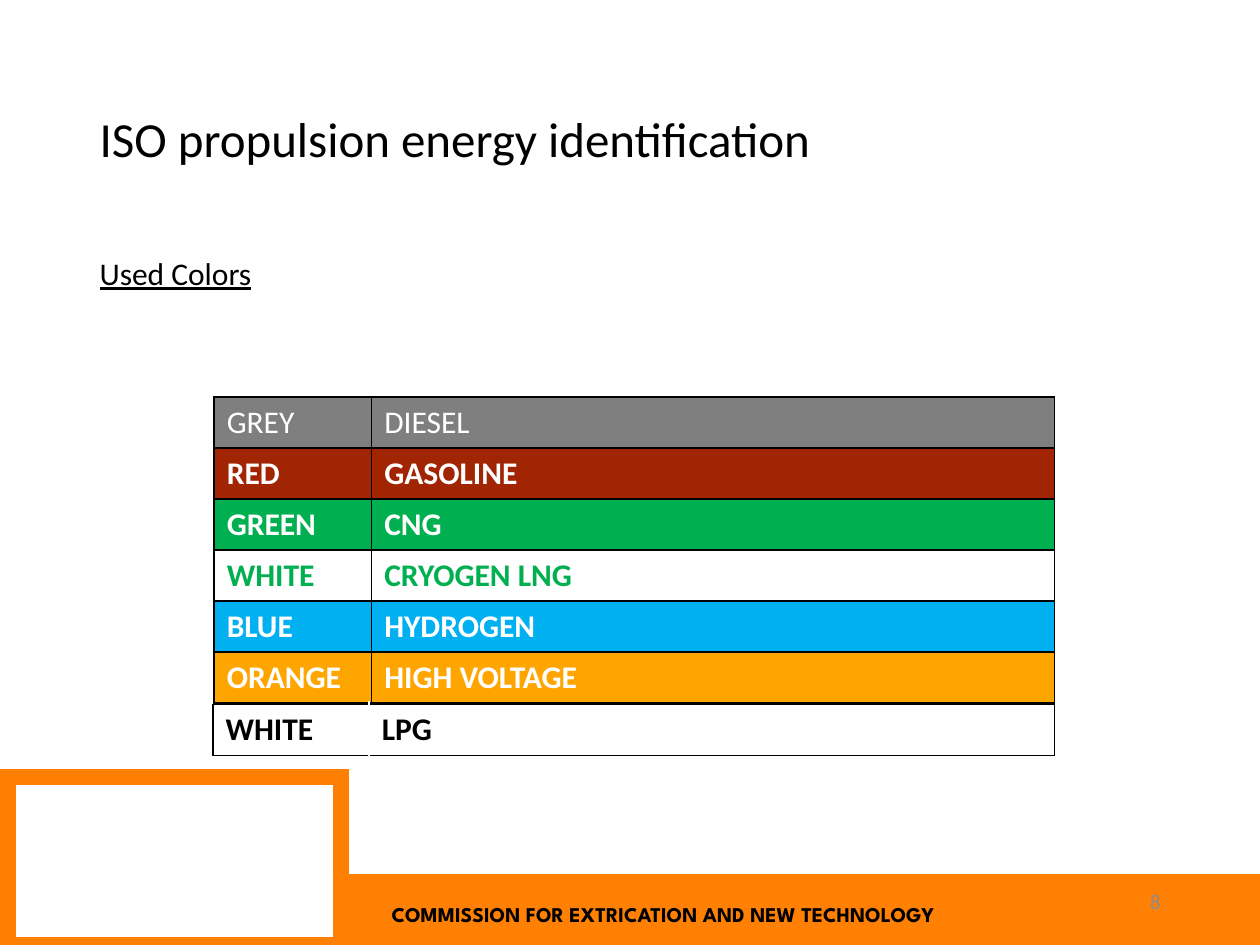
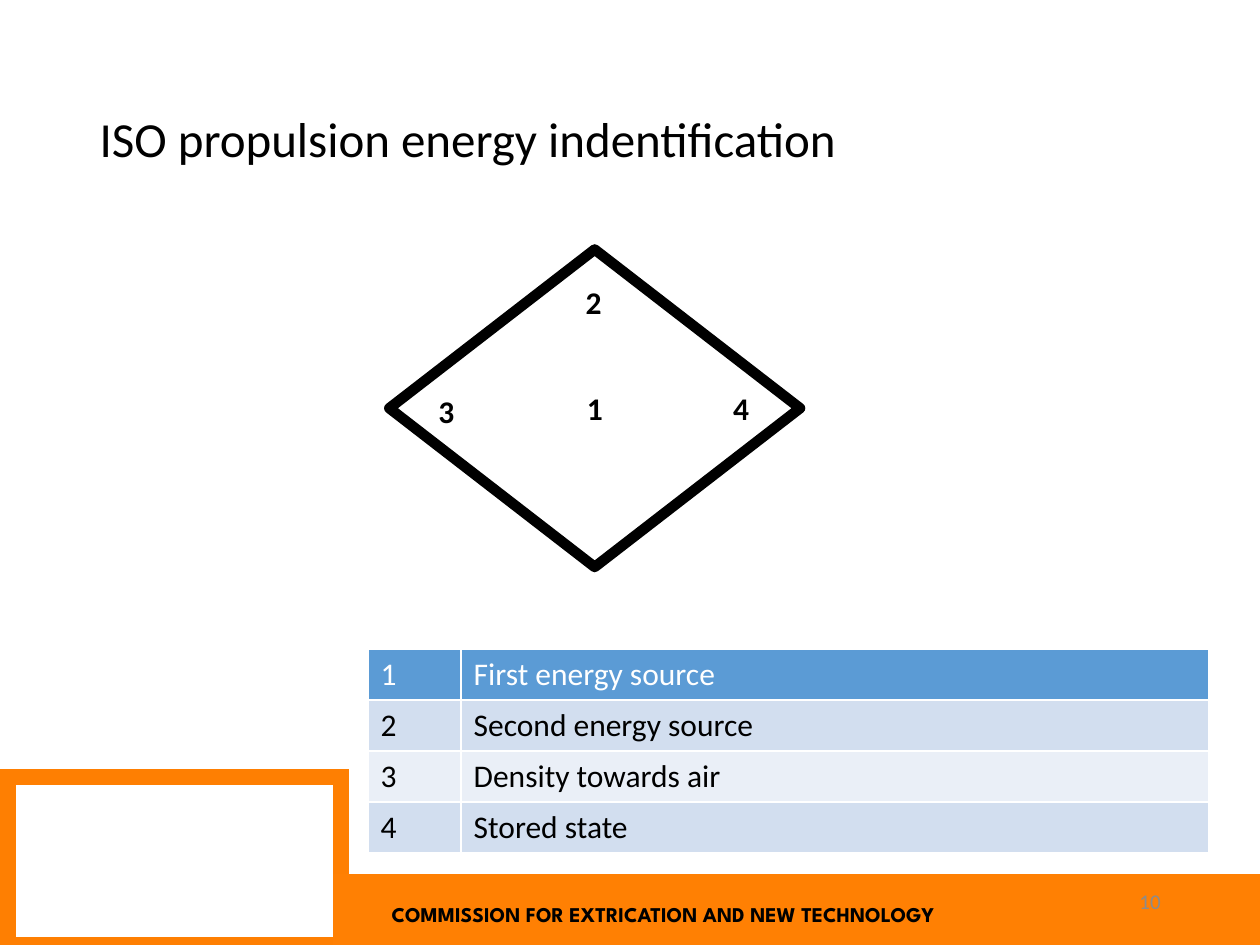
from lxml.etree import SubElement
from pptx import Presentation
from pptx.dml.color import RGBColor
from pptx.enum.shapes import MSO_CONNECTOR, MSO_SHAPE
from pptx.enum.text import MSO_ANCHOR, MSO_AUTO_SIZE, PP_ALIGN
from pptx.oxml.ns import qn
from pptx.util import Inches, Pt

rgb = RGBColor.from_string
BLACK, WHITE, GREEN = "000000", "FFFFFF", "00B050"
ORANGE, BAND_ORANGE = "FE7F02", "FF8003"
PAGE_GREY = "8C8C8C"
ROW_HEIGHT = 0.405


def write(frame, text, size=18, color=BLACK, bold=False, font="Calibri"):
    """Put one formatted paragraph in a text frame and return it."""
    frame.text = text
    frame.word_wrap = True
    paragraph = frame.paragraphs[0]
    paragraph.font.size = Pt(size)
    paragraph.font.name = font
    paragraph.font.bold = bold
    paragraph.font.color.rgb = rgb(color)
    return paragraph


def add_grid(slide, left, top, widths, border, rows):
    """Add a table; each row is (texts, fill, text colour, bold)."""
    table = slide.shapes.add_table(
        len(rows), len(widths), Inches(left), Inches(top),
        Inches(sum(widths)), Inches(ROW_HEIGHT * len(rows))).table
    for column, width in zip(table.columns, widths):
        column.width = Inches(width)
    for r, (texts, fill, color, bold) in enumerate(rows):
        table.rows[r].height = Inches(ROW_HEIGHT)
        for c, text in enumerate(texts):
            cell = table.cell(r, c)
            write(cell.text_frame, text, color=color, bold=bold)
            properties = cell._tc.get_or_add_tcPr()
            for side in ("a:lnL", "a:lnR", "a:lnT", "a:lnB"):
                edge = SubElement(properties, qn(side), w=str(Pt(1)))
                paint = SubElement(edge, qn("a:solidFill"))
                SubElement(paint, qn("a:srgbClr"), val=border)
            cell.fill.solid()
            cell.fill.fore_color.rgb = rgb(fill)


prs = Presentation()
prs.slide_width, prs.slide_height = Inches(10), Inches(7.5)
colors_slide = prs.slides.add_slide(prs.slide_layouts[1])
diamond_slide = prs.slides.add_slide(prs.slide_layouts[5])

# Shared parts: frame, band, footer, page number and title
for slide, title_text, page in (
        (colors_slide, "ISO propulsion energy identification", "8"),
        (diamond_slide, "ISO propulsion energy indentification", "10")):
    for left, top, width, height, fill, outline, weight in (
            (0.06, 6.17, 2.65, 1.33, WHITE, ORANGE, 9.25),
            (2.65, 6.94, 7.35, 0.62, BAND_ORANGE, BAND_ORANGE, 1)):
        block = slide.shapes.add_shape(
            MSO_SHAPE.RECTANGLE, Inches(left), Inches(top), Inches(width), Inches(height))
        block.shadow.inherit = False
        block.fill.solid()
        block.fill.fore_color.rgb = rgb(fill)
        block.line.color.rgb = rgb(outline)
        block.line.width = Pt(weight)
        SubElement(block._element.spPr.find(qn("a:ln")), qn("a:miter"), lim="800000")

    footer = slide.shapes.add_textbox(Inches(3.01), Inches(7.11), Inches(5.35), Inches(0.3))
    write(footer.text_frame, "COMMISSION FOR EXTRICATION AND NEW TECHNOLOGY",
          12, bold=True, font="League Spartan")

    page_number = slide.shapes.add_textbox(Inches(7.06), Inches(6.95), Inches(2.25), Inches(0.4))
    page_number.text_frame.vertical_anchor = MSO_ANCHOR.MIDDLE
    write(page_number.text_frame, page, 12, PAGE_GREY).alignment = PP_ALIGN.RIGHT

    title = slide.shapes.title
    title.left, title.top = Inches(0.69), Inches(0.4)
    title.width, title.height = Inches(8.62), Inches(1.45)
    title.text_frame.auto_size = MSO_AUTO_SIZE.NONE
    title.text_frame.vertical_anchor = MSO_ANCHOR.MIDDLE
    heading = write(title.text_frame, title_text, 28)
    heading.alignment = PP_ALIGN.LEFT
    heading.line_spacing = 0.9

# Slide 1: subtitle
body = colors_slide.placeholders[1]
body.left, body.top = Inches(0.69), Inches(2)
body.width, body.height = Inches(8.62), Inches(4.76)
body.text_frame.auto_size = MSO_AUTO_SIZE.NONE
body.text_frame.text = "Used Colors"
bullet_free = body.text_frame.paragraphs[0]._p.get_or_add_pPr()
bullet_free.set("marL", "0")
bullet_free.set("indent", "0")
SubElement(bullet_free, qn("a:buNone"))
subtitle = body.text_frame.paragraphs[0]
subtitle.line_spacing = 0.9
subtitle.space_before = Pt(0)
subtitle_run = subtitle.runs[0]
subtitle_run.font.size = Pt(18)
subtitle_run.font.name = "Calibri"
subtitle_run.font.underline = True
subtitle_run.font.color.rgb = rgb(BLACK)

# Slide 1: colour of each energy
add_grid(colors_slide, 1.7, 3.15, (1.25, 5.42), BLACK, [
    (("GREY", "DIESEL"), "7F7F7F", WHITE, False),
    (("RED", "GASOLINE"), "A12503", WHITE, True),
    (("GREEN", "CNG"), GREEN, WHITE, True),
    (("WHITE", "CRYOGEN LNG"), WHITE, GREEN, True),
    (("BLUE", "HYDROGEN"), "00B0F0", WHITE, True),
    (("ORANGE", "HIGH VOLTAGE"), "FFA500", WHITE, True),
])
add_grid(colors_slide, 1.69, 5.59, (1.24, 5.44), BLACK, [
    (("WHITE", "LPG"), WHITE, BLACK, True),
])
divider_cover = colors_slide.shapes.add_connector(
    MSO_CONNECTOR.STRAIGHT, Inches(2.93), Inches(5.56), Inches(2.93), Inches(6))
divider_cover.line.color.rgb = rgb(WHITE)
divider_cover.line.width = Pt(1)
SubElement(divider_cover._element.spPr, qn("a:effectLst"))

# Slide 2: numbered diamond
diamond = diamond_slide.shapes.add_shape(
    MSO_SHAPE.FLOWCHART_DECISION, Inches(3.09), Inches(1.98), Inches(3.26), Inches(2.52))
diamond.shadow.inherit = False
diamond.fill.solid()
diamond.fill.fore_color.rgb = rgb(WHITE)
diamond.line.color.rgb = rgb(BLACK)
diamond.line.width = Pt(6)
SubElement(diamond._element.spPr.find(qn("a:ln")), qn("a:round"))
for number, left, top in (("1", 4.56, 3.04), ("2", 4.55, 2.2),
                          ("3", 3.38, 3.06), ("4", 5.72, 3.04)):
    position = diamond_slide.shapes.add_textbox(
        Inches(left), Inches(top), Inches(0.35), Inches(0.4))
    write(position.text_frame, number, bold=True)

# Slide 2: meaning of each number
add_grid(diamond_slide, 2.92, 5.15, (0.74, 5.93), WHITE, [
    (("1", "First energy source"), "5B9BD5", WHITE, False),
    (("2", "Second energy source"), "D2DEEF", BLACK, False),
    (("3", "Density towards air"), "EAEFF7", BLACK, False),
    (("4", "Stored state"), "D2DEEF", BLACK, False),
])

prs.save("out.pptx")
